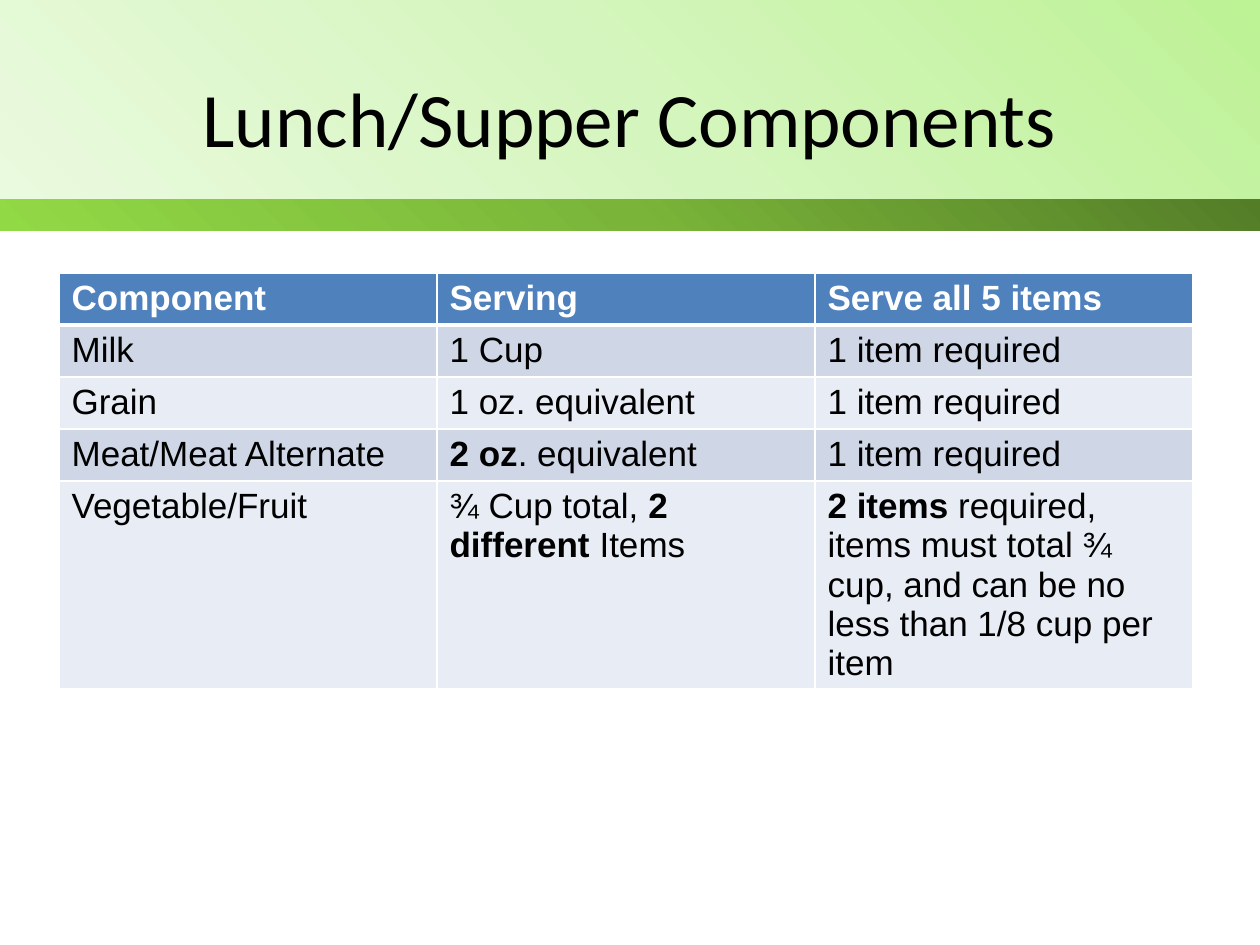
from pptx import Presentation
from pptx.dml.color import RGBColor
from pptx.enum.shapes import MSO_SHAPE as Shape
from pptx.enum.text import MSO_ANCHOR as Anchor, PP_ALIGN as Align
from pptx.oxml import parse_xml
from pptx.oxml.ns import nsdecls
from pptx.util import Pt

# Content: each cell is a list of (text, bold) spans
TITLE = "Lunch/Supper Components"
HEADER = ["Component", "Serving", "Serve all 5 items"]
ONE_ITEM = [("1 item required", False)]
ROWS = [
    [[(name, True)] for name in HEADER],
    [[("Milk", False)], [("1 Cup", False)], ONE_ITEM],
    [[("Grain", False)], [("1 oz. equivalent", False)], ONE_ITEM],
    [[("Meat/Meat Alternate", False)],
     [("2 oz", True), (". equivalent", False)], ONE_ITEM],
    [[("Vegetable/Fruit", False)],
     [("¾ Cup total, ", False), ("2 different ", True), ("Items", False)],
     [("2 items ", True),
      ("required, items must total ¾ cup, and can be no less than 1/8 cup per item", False)]],
]
COLORS = {
    "title": "000000", "text": "000000", "header_text": "FFFFFF",
    "header": "4F81BD", "odd": "CFD7E7", "even": "E8ECF4", "border": "FFFFFF",
}
# Bands: top, height, gradient from top right to bottom left
BANDS = [
    (0, 199, ["BDF295", "D5F5BE", "EAFADE"]),
    (199, 32, ["547D28", "7AB539", "92D946"]),
]
PAGE_WIDTH, PAGE_HEIGHT = 1260, 945
TITLE_BOX = (63, 38, 1134, 158)
TABLE_LEFT, TABLE_TOP, COLUMN_WIDTH = 59, 273, 378
ROW_HEIGHTS = [52, 52, 52, 52, 192]


def px(length):
    return round(length * 914400 / 126)


def add_band(page, top, height, colors):
    band = page.shapes.add_shape(Shape.RECTANGLE, 0, px(top), px(PAGE_WIDTH), px(height))
    band.shadow.inherit = False
    band.line.fill.background()
    stops = "".join(
        f'<a:gs pos="{i * 50000}"><a:srgbClr val="{color}"/></a:gs>'
        for i, color in enumerate(colors))
    properties = band.element.spPr
    properties.prstGeom.addnext(parse_xml(
        f'<a:gradFill {nsdecls("a")} rotWithShape="1"><a:gsLst>{stops}</a:gsLst>'
        '<a:lin ang="8100000" scaled="0"/></a:gradFill>'))
    return band


def set_borders(cell, bottom):
    properties = cell._tc.get_or_add_tcPr()
    widths = {"lnL": 1, "lnR": 1, "lnT": 1, "lnB": bottom}
    for i, (side, width) in enumerate(widths.items()):
        properties.insert(i, parse_xml(
            f'<a:{side} {nsdecls("a")} w="{Pt(width)}"><a:solidFill>'
            f'<a:srgbClr val="{COLORS["border"]}"/></a:solidFill></a:{side}>'))


def fill_cell(cell, spans, row):
    fill = "header" if row == 0 else "odd" if row % 2 else "even"
    cell.fill.solid()
    cell.fill.fore_color.rgb = RGBColor.from_string(COLORS[fill])
    set_borders(cell, 3 if row == 0 else 1)
    para = cell.text_frame.paragraphs[0]
    for text, bold in spans:
        span = para.add_run()
        span.text = text
        font = span.font
        font.name, font.size, font.bold = "Arial", Pt(20), bold
        font.color.rgb = RGBColor.from_string(COLORS["text" if row else "header_text"])


def main():
    deck = Presentation()
    deck.slide_width, deck.slide_height = px(PAGE_WIDTH), px(PAGE_HEIGHT)
    page = deck.slides.add_slide(deck.slide_layouts[5])

    # Title
    title = page.shapes.title
    title.left, title.top, title.width, title.height = map(px, TITLE_BOX)
    title.text_frame.text = TITLE
    title.text_frame.vertical_anchor = Anchor.MIDDLE
    para = title.text_frame.paragraphs[0]
    para.alignment = Align.CENTER
    font = para.runs[0].font
    font.name, font.size = "Calibri", Pt(44)
    font.color.rgb = RGBColor.from_string(COLORS["title"])

    # Header bands, behind the title
    for top, height, colors in BANDS:
        band = add_band(page, top, height, colors)
        title.element.addprevious(band.element)

    # Components table
    table = page.shapes.add_table(
        len(ROWS), len(HEADER), px(TABLE_LEFT), px(TABLE_TOP),
        px(COLUMN_WIDTH * len(HEADER)), px(sum(ROW_HEIGHTS))).table
    for row, (cells, height) in enumerate(zip(ROWS, ROW_HEIGHTS)):
        table.rows[row].height = px(height)
        for column, spans in enumerate(cells):
            fill_cell(table.cell(row, column), spans, row)

    deck.save("out.pptx")


if __name__ == "__main__":
    main()
